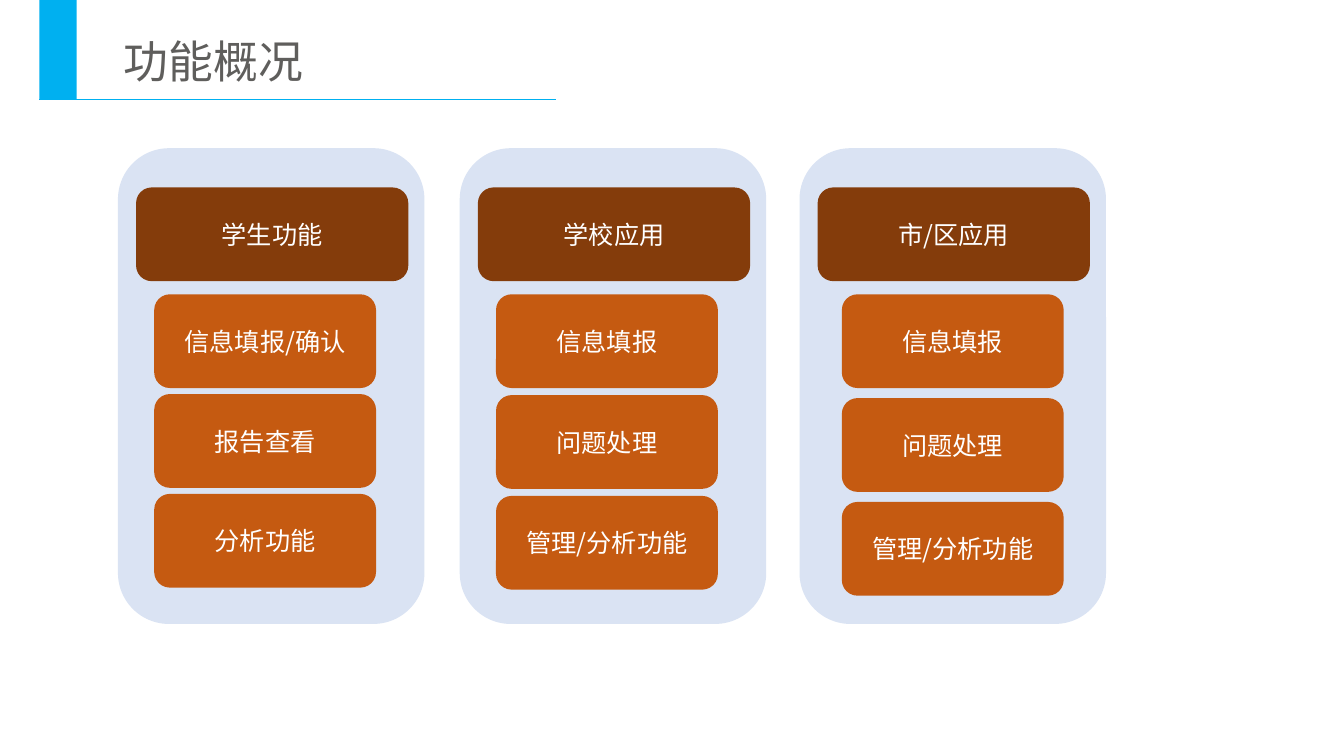
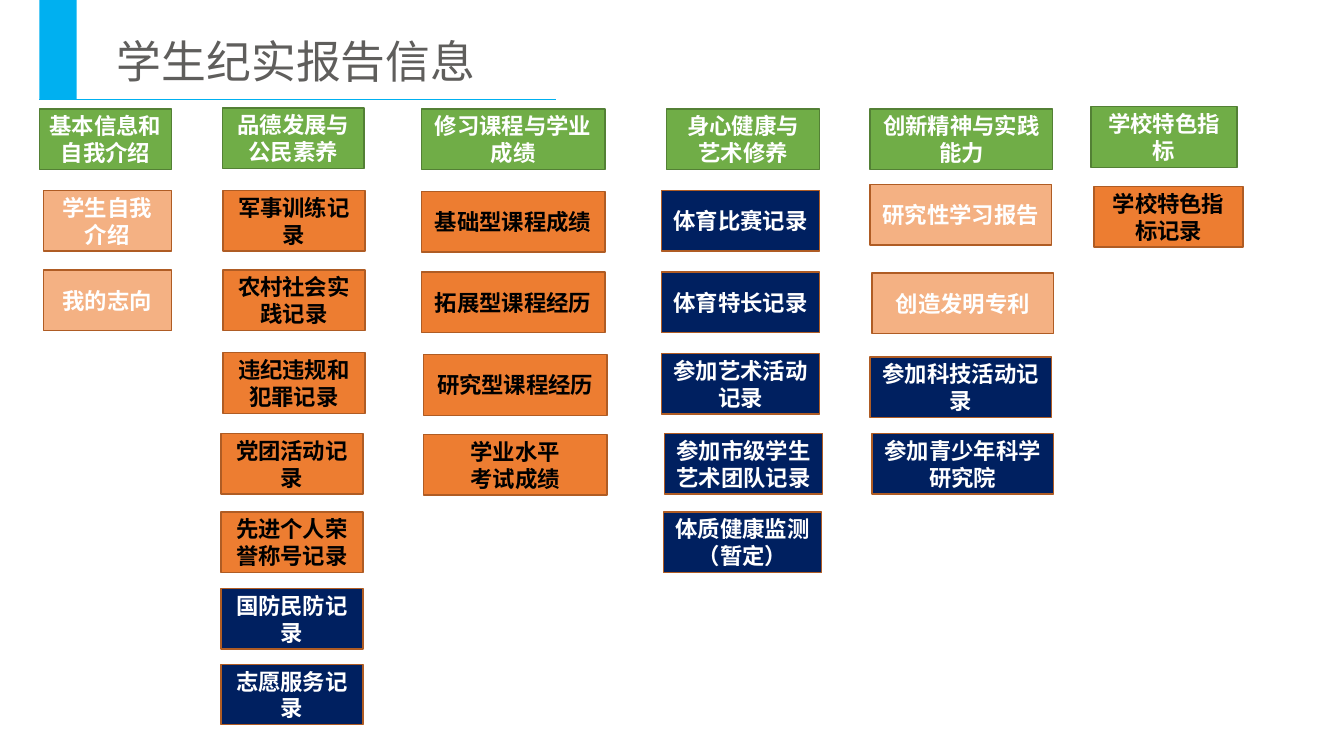
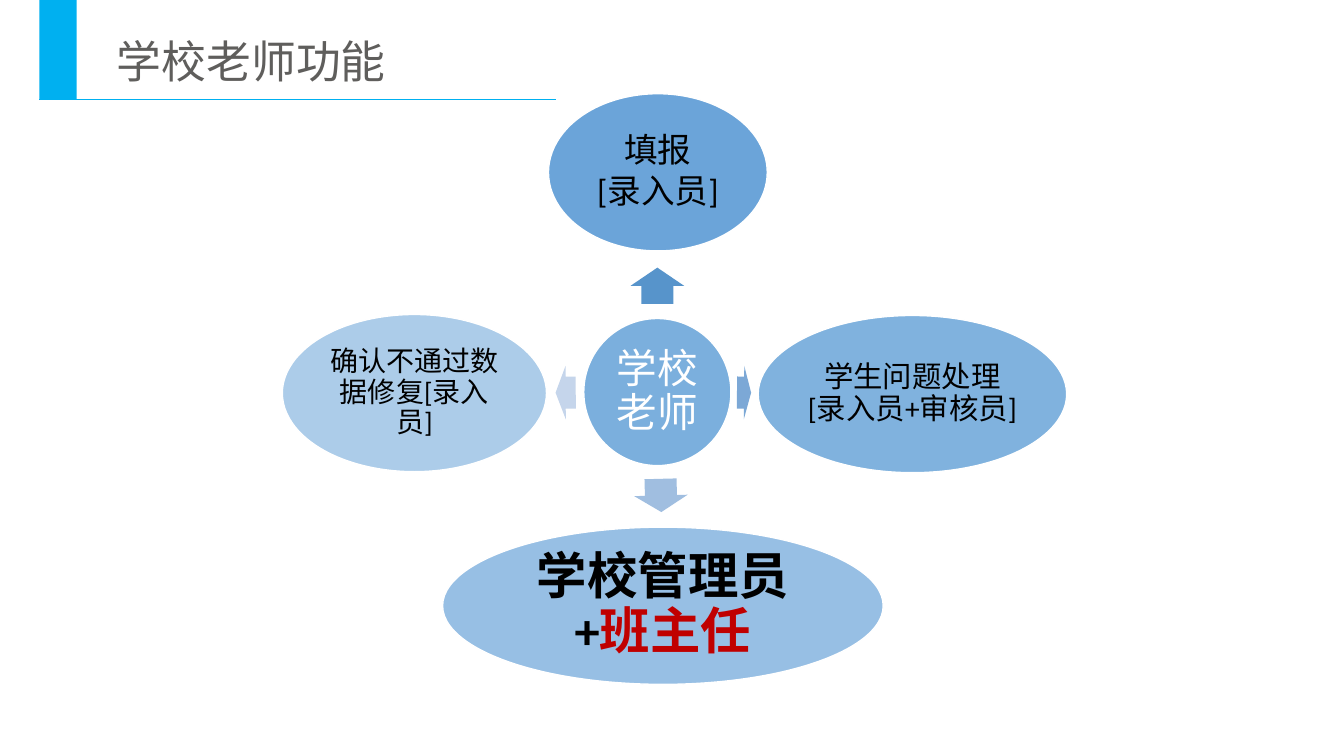
from lxml import etree
from pptx import Presentation
from pptx.dml.color import RGBColor
from pptx.enum.shapes import MSO_CONNECTOR, MSO_SHAPE
from pptx.enum.text import MSO_ANCHOR, PP_ALIGN
from pptx.oxml.ns import qn
from pptx.util import Inches, Pt

RECT, ROUNDED = MSO_SHAPE.RECTANGLE, MSO_SHAPE.ROUNDED_RECTANGLE
OVAL, ARROW = MSO_SHAPE.OVAL, MSO_SHAPE.RIGHT_ARROW
STRAIGHT = MSO_CONNECTOR.STRAIGHT
MIDDLE, TOP = MSO_ANCHOR.MIDDLE, MSO_ANCHOR.TOP
CENTER, LEFT = PP_ALIGN.CENTER, PP_ALIGN.LEFT

FONT = "Noto Sans CJK SC"
WHITE, BLACK = "FFFFFF", "000000"
ACCENT, TITLE_GREY = "00B0F0", "5F5E5C"
PANEL, DARK_BROWN, BROWN = "DAE3F3", "843C0B", "C55A11"
GREEN, GREEN_EDGE, ORANGE_EDGE = "70AD47", "538035", "AF5C24"
ORANGE, PEACH, NAVY = "ED7D31", "F4B183", "002060"
BLUE, RED = "5B9BD5", "C00000"


def paint(fill, color, opacity=100):
    fill.solid()
    fill.fore_color.rgb = RGBColor.from_string(color)
    if opacity < 100:
        for node in fill._xPr.iter(qn("a:srgbClr")):
            etree.SubElement(node, qn("a:alpha")).set("val", str(opacity * 1000))


def add_box(page, kind, at, fill=None, edge=None, text="", size=18, color=WHITE,
            bold=False, font=FONT, opacity=100, inset=None, spacing=None,
            align=CENTER, anchor=MIDDLE, accent=None):
    """Add a shape with text; each line is a paragraph, accent is one more coloured run."""
    box = page.shapes.add_shape(kind, *[Inches(value) for value in at])
    box.shadow.inherit = False
    if fill:
        paint(box.fill, fill, opacity)
    else:
        box.fill.background()
    if edge:
        paint(box.line.fill, edge)
        box.line.width = Pt(1)
    else:
        box.line.fill.background()
    if not text:
        return box
    frame = box.text_frame
    frame.word_wrap = True
    frame.vertical_anchor = anchor
    if inset is not None:
        frame.margin_left = frame.margin_right = Inches(inset)
        frame.margin_top = frame.margin_bottom = Inches(inset)
    lines = [[(line, color)] for line in text.split("\n")]
    if accent:
        lines[-1].append(accent)
    for index, line in enumerate(lines):
        para = frame.add_paragraph() if index else frame.paragraphs[0]
        para.alignment = align
        if spacing:
            para.line_spacing = spacing
            para.space_after = Pt(3)
        for words, span_color in line:
            span = para.add_run()
            span.text = words
            span.font.name = font
            span.font.size = Pt(size)
            span.font.bold = bold
            paint(span.font.fill, span_color)
            east_asian = etree.SubElement(span.font._element, qn("a:ea"))
            east_asian.set("typeface", FONT)
    return box


deck = Presentation()
deck.slide_width, deck.slide_height = Inches(13.33), Inches(7.5)

# Shared title style, band and rule
pages = []
for title, left in [("功能概况", 1.13), ("学生纪实报告信息", 1.06), ("学校老师功能", 1.06)]:
    page = deck.slides.add_slide(deck.slide_layouts[6])
    add_box(page, RECT, (0.39, 0, 0.37, 0.99), ACCENT)
    rule = page.shapes.add_connector(
        STRAIGHT, Inches(0.39), Inches(0.99), Inches(5.51), Inches(0.99))
    paint(rule.line.fill, ACCENT)
    rule.line.width = Pt(0.5)
    etree.SubElement(rule._element.spPr, qn("a:effectLst"))
    heading = page.shapes.add_textbox(Inches(left), Inches(0.29), Inches(6.89), Inches(0.64))
    heading.text_frame.word_wrap = True
    span = heading.text_frame.paragraphs[0].add_run()
    span.text = title
    span.font.name = FONT
    span.font.size = Pt(32)
    paint(span.font.fill, TITLE_GREY)
    etree.SubElement(span.font._element, qn("a:ea")).set("typeface", FONT)
    pages.append(page)
overview, report, teacher = pages

# Function overview: panel left, tile left, tile pitch, header, tiles
columns = [
    (1.17, 1.53, 0.99, "学生功能", ["信息填报/确认", "报告查看", "分析功能"]),
    (4.56, 4.92, 1.0, "学校应用", ["信息填报", "问题处理", "管理/分析功能"]),
    (7.93, 8.35, 1.03, "市/区应用", ["信息填报", "问题处理", "管理/分析功能"]),
]
for left, tile_left, pitch, header, tiles in columns:
    add_box(overview, ROUNDED, (left, 1.47, 3.04, 4.72), PANEL)
    add_box(overview, ROUNDED, (left + 0.18, 1.86, 2.7, 0.93), DARK_BROWN, text=header)
    for row, tile in enumerate(tiles):
        add_box(overview, ROUNDED, (tile_left, 2.92 + row * pitch, 2.2, 0.93),
                BROWN, text=tile)

# Student report: header (left, top, width, text), record width, records
record_groups = [
    ((0.39, 1.08, 1.31, "基本信息和自我介绍"), 1.27, [
        (0.43, 1.89, PEACH, "学生自我介绍"),
        (0.43, 2.68, PEACH, "我的志向")]),
    ((2.21, 1.07, 1.4, "品德发展与公民素养"), 1.41, [
        (2.21, 1.89, ORANGE, "军事训练记录"),
        (2.21, 2.68, ORANGE, "农村社会实践记录"),
        (2.21, 3.5, ORANGE, "违纪违规和犯罪记录"),
        (2.19, 4.3, ORANGE, "党团活动记录"),
        (2.19, 5.08, ORANGE, "先进个人荣誉称号记录"),
        (2.19, 5.84, NAVY, "国防民防记录"),
        (2.19, 6.59, NAVY, "志愿服务记录")]),
    ((4.18, 1.08, 1.82, "修习课程与学业成绩"), 1.82, [
        (4.18, 1.9, ORANGE, "基础型课程成绩"),
        (4.18, 2.7, ORANGE, "拓展型课程经历"),
        (4.2, 3.52, ORANGE, "研究型课程经历"),
        (4.2, 4.31, ORANGE, "学业水平\n考试成绩")]),
    ((6.61, 1.08, 1.52, "身心健康与艺术修养"), 1.57, [
        (6.56, 1.89, NAVY, "体育比赛记录"),
        (6.56, 2.7, NAVY, "体育特长记录"),
        (6.56, 3.51, NAVY, "参加艺术活动记录"),
        (6.59, 4.3, NAVY, "参加市级学生艺术团队记录"),
        (6.58, 5.08, NAVY, "体质健康监测（暂定）")]),
    ((8.63, 1.08, 1.81, "创新精神与实践能力"), 1.8, [
        (8.63, 1.83, PEACH, "研究性学习报告"),
        (8.65, 2.71, PEACH, "创造发明专利"),
        (8.63, 3.54, NAVY, "参加科技活动记录"),
        (8.65, 4.3, NAVY, "参加青少年科学研究院")]),
    ((10.82, 1.06, 1.45, "学校特色指标"), 1.48, [
        (10.85, 1.85, ORANGE, "学校特色指标记录")]),
]
for (left, top, width, header), record_width, records in record_groups:
    add_box(report, RECT, (left, top, width, 0.6), GREEN, GREEN_EDGE, header, 16, bold=True)
    for left, top, fill, record in records:
        add_box(report, RECT, (left, top, record_width, 0.6), fill, ORANGE_EDGE, record, 16,
                BLACK if fill == ORANGE else WHITE, bold=True)

# Teacher functions: a hub, four arrows and four ovals
add_box(teacher, OVAL, (5.79, 3.16, 1.46, 1.46), BLUE, WHITE, "学校老师", 29,
        font="Calibri", opacity=80, inset=0.04, spacing=0.9)
arrows = [
    ((6.34, 2.57, 0.36, 0.53), 270, "5794CB"),
    ((7.31, 3.63, 0.14, 0.53), 0.5, "7CA8D6"),
    ((6.39, 4.65, 0.33, 0.53), 88.5, "A0BEE0"),
    ((5.51, 3.63, 0.2, 0.53), 179.7, "C5D5EB"),
]
for at, angle, fill in arrows:
    arrow = add_box(teacher, ARROW, at, fill)
    arrow.rotation = angle
    arrow.adjustments[0], arrow.adjustments[1] = 0.6, 0.5

duties = [
    ((5.44, 0.93, 2.17, 1.56), 90, "填报\n[录入员]", 24, None),
    ((7.52, 3.13, 3.06, 1.56), 77, "学生问题处理[录入员+审核员]", 21, None),
    ((4.39, 5.23, 4.37, 1.56), 63, "学校管理员+", 36, ("班主任", RED)),
    ((2.8, 3.12, 2.62, 1.56), 50, "确认不通过数据修复[录入员]", 20, None),
]
for at, opacity, duty, size, accent in duties:
    add_box(teacher, OVAL, at, BLUE, WHITE, duty, size, BLACK, bold=accent is not None,
            font="Calibri", opacity=opacity, inset=0.03, spacing=0.9, accent=accent)

deck.save("out.pptx")
